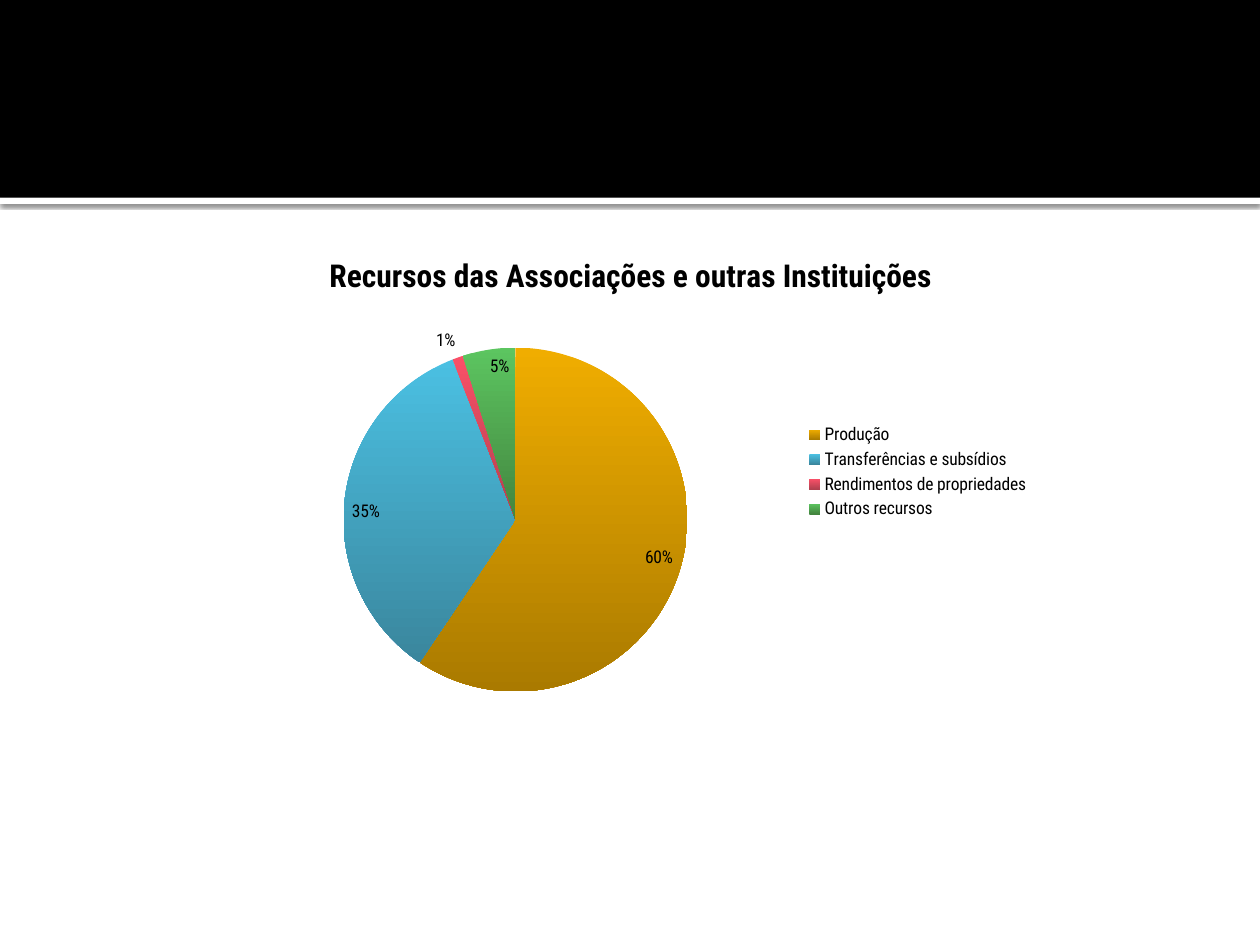
from lxml import etree
from pptx import Presentation
from pptx.chart.data import CategoryChartData
from pptx.dml.color import RGBColor
from pptx.enum import chart as ch, shapes
from pptx.oxml import parse_xml
from pptx.oxml.ns import nsdecls, qn
from pptx.util import Pt

FONT = "Roboto Condensed"
TITLE = "Recursos das Associações e outras Instituições"
# name, percent, top and bottom colour of the slice
PARTS = [
    ("Produção", 60, "F0AD00", "AA7A00"),
    ("Transferências e subsídios", 35, "4BC0E2", "3A869D"),
    ("Rendimentos de propriedades", 1, "FA5068", "B0404F"),
    ("Outros recursos", 5, "5CC560", "43853F"),
]


def tint(code):
    return RGBColor.from_string(code)


def style(font, size, bold=False):
    font.name, font.size, font.bold = FONT, Pt(size), bold
    font.color.rgb = tint("000000")


def band(slide, box, code):
    bar = slide.shapes.add_shape(shapes.MSO_SHAPE.RECTANGLE, *map(Pt, box))
    bar.shadow.inherit = False
    bar.fill.solid()
    bar.fill.fore_color.rgb = tint(code)
    bar.line.fill.background()
    return bar


def head(slide, box):
    """Black band with a white rule below it that casts a shadow."""
    x, y, w, h = box
    rule = band(slide, (x, y + h, w, 3.6), "FFFFFF")
    glow = parse_xml(
        f'<a:outerShdw {nsdecls("a")} blurRad="{Pt(2.5)}" dist="{Pt(0.8)}" '
        'dir="5400000" algn="t" rotWithShape="0"><a:srgbClr val="000000">'
        '<a:alpha val="60000"/></a:srgbClr></a:outerShdw>')
    rule._element.spPr.find(qn("a:effectLst")).append(glow)
    band(slide, box, "000000")


def place(plot, x, y, w, h):
    """Fix the pie within the chart, as fractions of its box."""
    area = plot._element.getparent()
    old = area.find(qn("c:layout"))
    if old is not None:
        area.remove(old)
    lay = etree.Element(qn("c:layout"))
    man = etree.SubElement(lay, qn("c:manualLayout"))
    rows = [("layoutTarget", "inner"), ("xMode", "edge"), ("yMode", "edge"),
            ("x", x), ("y", y), ("w", w), ("h", h)]
    for tag, val in rows:
        etree.SubElement(man, qn(f"c:{tag}")).set("val", str(val))
    area.insert(0, lay)


def pie(slide, box):
    data = CategoryChartData(number_format='0"%"')
    data.categories = [part[0] for part in PARTS]
    data.add_series("Recursos", [part[1] for part in PARTS])
    chart = slide.shapes.add_chart(
        ch.XL_CHART_TYPE.PIE, *map(Pt, box), data).chart
    style(chart.font, 10)

    chart.has_title = True
    run = chart.chart_title.text_frame.paragraphs[0].add_run()
    run.text = TITLE
    style(run.font, 18, True)
    chart.chart_title.include_in_layout = False

    chart.has_legend = True
    chart.legend.position = ch.XL_LEGEND_POSITION.RIGHT
    chart.legend.include_in_layout = False
    style(chart.legend.font, 10)

    plot = chart.plots[0]
    plot.vary_by_categories = True
    place(plot, 0.15, 0.24, 0.42, 0.72)
    series = plot.series[0]
    for i, (_, size, top, low) in enumerate(PARTS):
        fill = series.points[i].format.fill
        fill.gradient()
        fill.gradient_angle = 270
        for stop, code in zip(fill.gradient_stops, (top, low)):
            stop.color.rgb = tint(code)

    tags = series.data_labels
    tags.show_value = True
    tags.number_format, tags.number_format_is_linked = '0"%"', False
    tags.position = ch.XL_LABEL_POSITION.INSIDE_END
    style(tags.font, 10)
    for i, part in enumerate(PARTS):
        if part[1] < 3:  # too thin to hold its label
            tag = series.points[i].data_label
            tag.position = ch.XL_LABEL_POSITION.OUTSIDE_END
            style(tag.font, 10)


def main():
    deck = Presentation()
    deck.slide_width, deck.slide_height = Pt(720), Pt(540)
    slide = deck.slides.add_slide(deck.slide_layouts[6])
    head(slide, (0, 0, 720, 113))
    pie(slide, (125.3, 133.2, 470.2, 272.9))
    deck.save("out.pptx")


if __name__ == "__main__":
    main()
